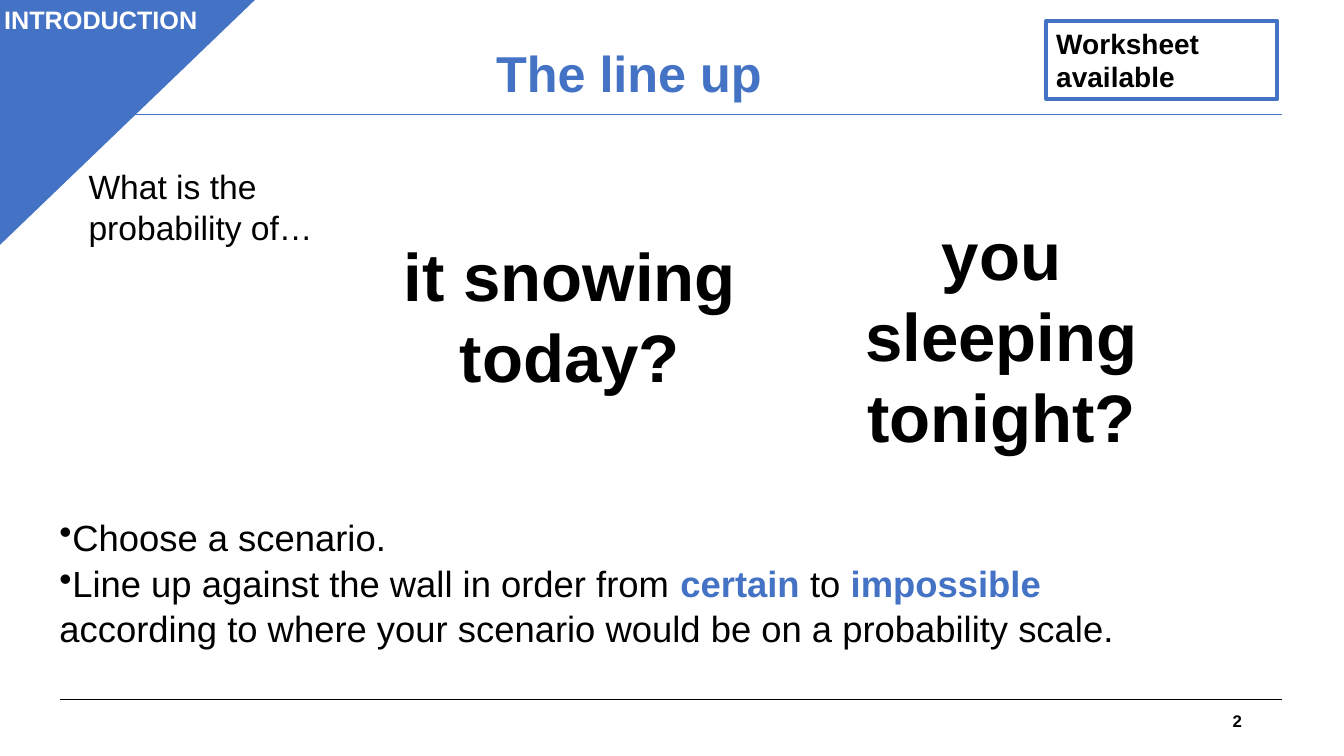
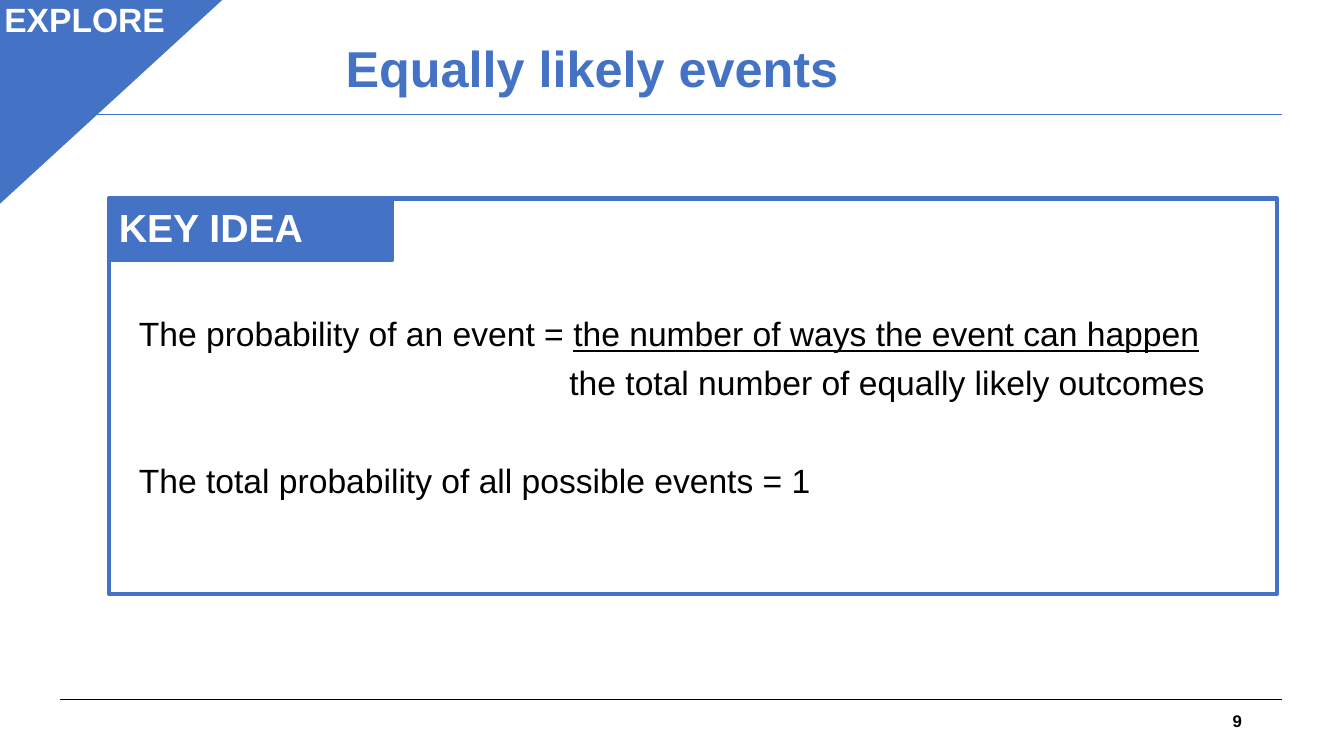
from dataclasses import dataclass, field
from typing import Optional

from lxml import etree
from pptx import Presentation
from pptx.dml.color import RGBColor
from pptx.enum import shapes, text
from pptx.oxml import ns
from pptx.util import Emu, Inches, Pt

LEFT, CENTER, RIGHT = text.PP_ALIGN.LEFT, text.PP_ALIGN.CENTER, text.PP_ALIGN.RIGHT
TOP, MIDDLE = text.MSO_ANCHOR.TOP, text.MSO_ANCHOR.MIDDLE


@dataclass(frozen=True)
class Theme:
    font: str = "Arial"
    accent: RGBColor = RGBColor(0x44, 0x72, 0xC4)
    ink: RGBColor = RGBColor(0, 0, 0)
    paper: RGBColor = RGBColor(255, 255, 255)
    title: float = 36
    event: float = 48
    key: float = 28
    instruction: float = 26
    body: float = 24
    note: float = 20
    section: float = 18
    number: float = 12
    frame: float = 3
    rule: float = 0.75


THEME = Theme()
WIDTH, HEIGHT = Inches(13.33), Inches(7.5)


@dataclass(frozen=True)
class Box:
    """Left, top, width and height in percent of the slide's size."""
    x: float
    y: float
    w: float
    h: float

    def emu(self) -> tuple[Emu, Emu, Emu, Emu]:
        return across(self.x), down(self.y), across(self.w), down(self.h)


@dataclass(frozen=True)
class Run:
    words: str
    color: RGBColor = THEME.ink
    bold: bool = False
    underline: bool = False


@dataclass(frozen=True)
class Para:
    runs: list[Run]
    size: float
    align: text.PP_ALIGN = LEFT
    spacing: float = 1
    before: float = 0
    after: float = 0
    indent: float = 0
    bullet: bool = False


@dataclass(frozen=True)
class Panel:
    box: Box
    paras: list[Para] = field(default_factory=list)
    fill: Optional[RGBColor] = None
    line: Optional[RGBColor] = None
    anchor: text.MSO_ANCHOR = TOP


@dataclass(frozen=True)
class Corner:
    triangle: Box
    label: Box
    words: str
    size: float


@dataclass(frozen=True)
class Page:
    number: int
    title: str
    title_box: Box
    title_align: text.PP_ALIGN
    title_anchor: text.MSO_ANCHOR
    corner: Corner
    panels: list[Panel]


def across(share: float) -> Emu:
    return Emu(round(WIDTH * share / 100))


def down(share: float) -> Emu:
    return Emu(round(HEIGHT * share / 100))


# Drawing
def write(frame, paras: list[Para], anchor: text.MSO_ANCHOR) -> None:
    frame.word_wrap = True
    frame.vertical_anchor = anchor
    for index, para in enumerate(paras):
        line = frame.paragraphs[0] if index == 0 else frame.add_paragraph()
        line.alignment = para.align
        line.line_spacing = para.spacing
        line.space_before, line.space_after = Pt(para.before), Pt(para.after)
        props = line._p.get_or_add_pPr()
        if para.indent:
            props.set("marL", str(across(para.indent)))
        if para.bullet:
            etree.SubElement(props, ns.qn("a:buChar"), char="•")
        for part in para.runs:
            for row, words in enumerate(part.words.split("\n")):
                if row:
                    line.add_line_break()
                run = line.add_run()
                run.text = words
                run.font.name, run.font.size = THEME.font, Pt(para.size)
                run.font.bold, run.font.underline = part.bold, part.underline
                run.font.color.rgb = part.color


def paint(shape, fill: Optional[RGBColor], line: Optional[RGBColor], width: float) -> None:
    shape.shadow.inherit = False
    if fill is None:
        shape.fill.background()
    else:
        shape.fill.solid()
        shape.fill.fore_color.rgb = fill
    if line is None:
        shape.line.fill.background()
    else:
        shape.line.color.rgb = line
        shape.line.width = Pt(width)


def draw_panel(slide, panel: Panel) -> None:
    if panel.fill is None and panel.line is None:
        shape = slide.shapes.add_textbox(*panel.box.emu())
    else:
        shape = slide.shapes.add_shape(shapes.MSO_SHAPE.RECTANGLE, *panel.box.emu())
        paint(shape, panel.fill, panel.line, THEME.frame)
    if panel.paras:
        write(shape.text_frame, panel.paras, panel.anchor)


def draw_rule(slide, y: float, color: RGBColor) -> None:
    rule = slide.shapes.add_connector(
        shapes.MSO_CONNECTOR.STRAIGHT, across(4.43), down(y), across(95.4), down(y))
    rule.line.color.rgb = color
    rule.line.width = Pt(THEME.rule)
    etree.SubElement(rule._element.spPr, ns.qn("a:effectLst"))


def draw_corner(slide, corner: Corner) -> None:
    triangle = slide.shapes.add_shape(
        shapes.MSO_SHAPE.ISOSCELES_TRIANGLE, *corner.triangle.emu())
    triangle.adjustments[0] = 0
    triangle._element.spPr.find(ns.qn("a:xfrm")).set("flipV", "1")
    paint(triangle, THEME.accent, THEME.accent, 1)
    label = Para([Run(corner.words, THEME.paper, True)], corner.size, CENTER)
    draw_panel(slide, Panel(corner.label, [label]))


def draw_page(deck, page: Page) -> None:
    slide = deck.slides.add_slide(deck.slide_layouts[6])
    # Rules, page number and title
    draw_rule(slide, 92.53, THEME.ink)
    draw_rule(slide, 15.2, THEME.accent)
    number = Para([Run(str(page.number), bold=True)], THEME.number, RIGHT)
    draw_panel(slide, Panel(Box(70.65, 92.67, 22.5, 5.33), [number], anchor=MIDDLE))
    title = Para([Run(page.title, THEME.accent, True)], THEME.title, page.title_align, 0.9)
    draw_panel(slide, Panel(page.title_box, [title], anchor=page.title_anchor))
    # Content, then the section corner on top
    for panel in page.panels:
        draw_panel(slide, panel)
    draw_corner(slide, page.corner)


# Content
def event(x: float, y: float, words: str) -> Panel:
    para = Para([Run(words, bold=True)], THEME.event, CENTER, after=6)
    return Panel(Box(x, y, 28.88, 34.4), [para], fill=THEME.paper)


def instruction(*runs: Run) -> Para:
    return Para(list(runs), THEME.instruction, spacing=1.03, before=1, bullet=True)


def statement(*runs: Run, before: float = 0, indent: float = 0) -> Para:
    return Para(list(runs), THEME.body, before=before, after=6, indent=indent)


def key_term(words: str) -> Run:
    return Run(words, THEME.accent, True)


LINE_UP = Page(
    2, "The line up", Box(3.68, 5.87, 86.25, 19.33), CENTER, TOP,
    Corner(Box(-0.23, -0.27, 19.28, 32.93), Box(-0.6, -0.13, 16.2, 5.07),
           "INTRODUCTION", THEME.section),
    [
        Panel(Box(3.68, 67.33, 82.5, 22.93), [
            instruction(Run("Choose a scenario.")),
            instruction(
                Run("Line up against the wall in order from "), key_term("certain"),
                Run(" to "), key_term("impossible"),
                Run(" according to where your scenario would be on a probability scale.")),
        ]),
        Panel(Box(77.85, 2.8, 17.18, 10.27),
              [Para([Run("Worksheet\navailable", bold=True)], THEME.note)],
              line=THEME.accent),
        Panel(Box(5.85, 21.33, 24, 13.07),
              [statement(Run("What is the probability of…"))], fill=THEME.paper),
        event(27.98, 30.4, "it snowing today?"),
        event(60.08, 27.6, "you sleeping tonight?"),
    ])

KEY_FRAME = Box(8.1, 26.27, 86.93, 52.27)
EQUALLY_LIKELY = Page(
    9, "Equally likely events", Box(24.98, 2, 75, 14.8), LEFT, MIDDLE,
    Corner(Box(-0.23, -0.8, 17.18, 28), Box(-0.6, -0.8, 13.8, 6.67),
           "EXPLORE", THEME.body),
    [
        Panel(Box(KEY_FRAME.x, KEY_FRAME.y, 21.08, 8.13),
              [Para([Run("KEY IDEA", THEME.paper, True)], THEME.key)],
              fill=THEME.accent, line=THEME.accent),
        Panel(KEY_FRAME, line=THEME.accent),
        Panel(Box(9.6, 40.8, 83.55, 26.27), [
            statement(Run("The probability of an event = "),
                      Run("the number of ways the event can happen", underline=True)),
            statement(Run("the total number of equally likely outcomes"), indent=32.03),
            statement(Run("The total probability of all possible events = 1"), before=35),
        ]),
    ])


def main() -> None:
    deck = Presentation()
    deck.slide_width, deck.slide_height = WIDTH, HEIGHT
    for page in (LINE_UP, EQUALLY_LIKELY):
        draw_page(deck, page)
    deck.save("out.pptx")


if __name__ == "__main__":
    main()
